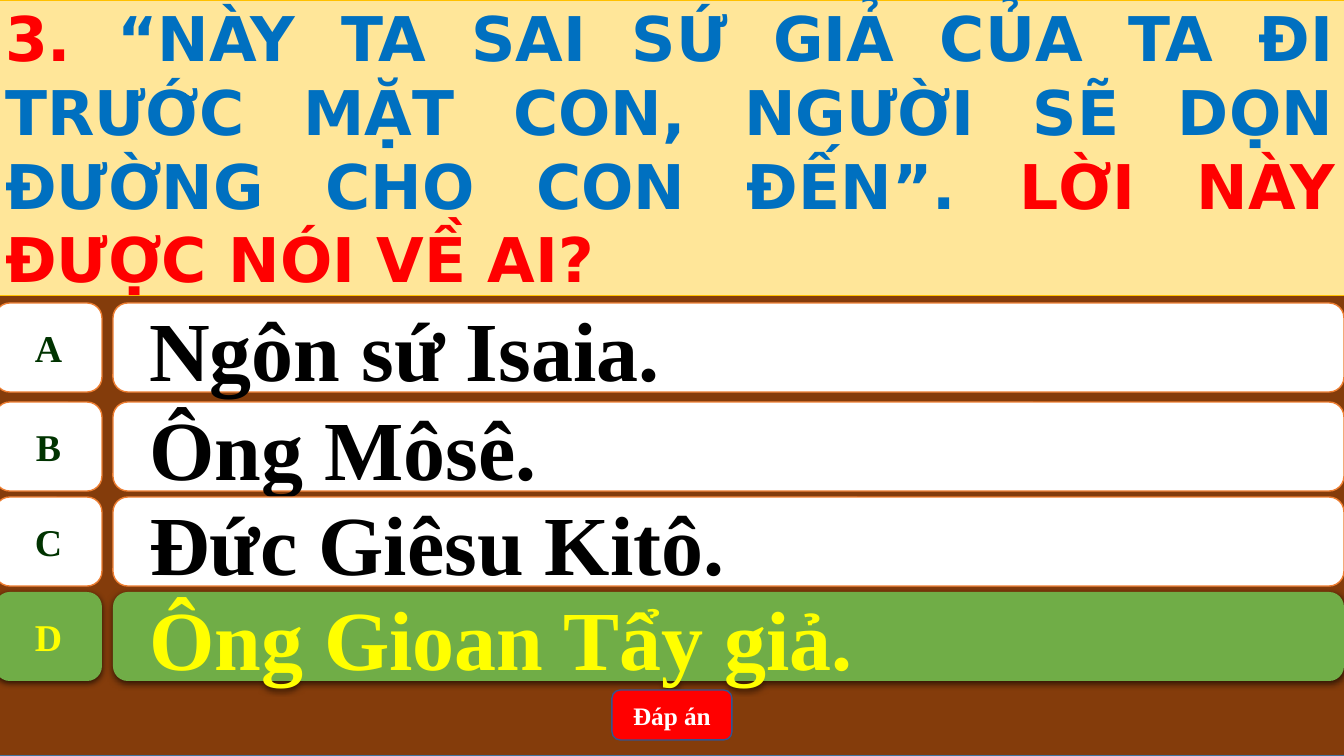
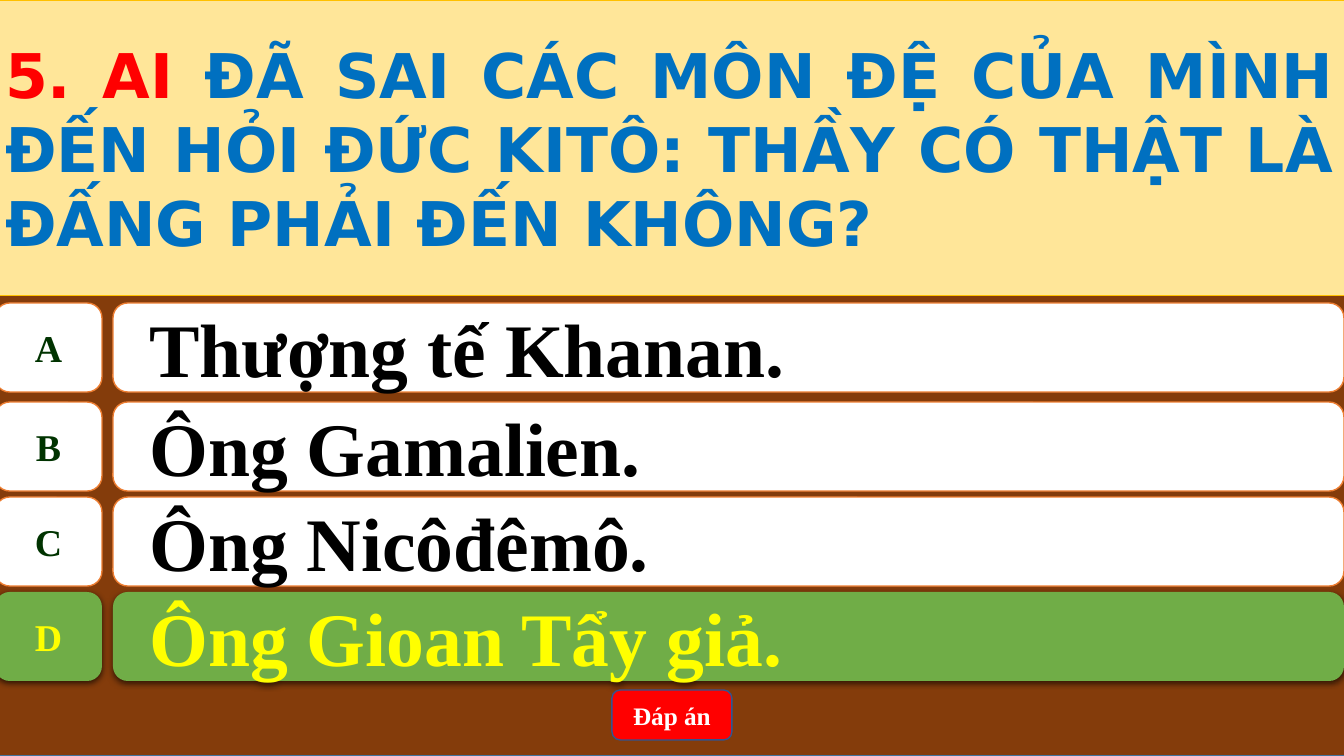
from lxml import etree
from pptx import Presentation
from pptx.dml.color import RGBColor
from pptx.enum.shapes import MSO_SHAPE
from pptx.enum.text import MSO_ANCHOR, MSO_AUTO_SIZE, PP_ALIGN
from pptx.oxml import parse_xml
from pptx.oxml.ns import nsdecls
from pptx.util import Pt

PX = 914400 / 100.8
RECT = MSO_SHAPE.RECTANGLE
ROUNDED = MSO_SHAPE.ROUNDED_RECTANGLE
LETTER_BOX = MSO_SHAPE.FLOWCHART_ALTERNATE_PROCESS
MIDDLE = MSO_ANCHOR.MIDDLE
NO_AUTOFIT = MSO_AUTO_SIZE.NONE
CENTER, LEFT, JUSTIFY = PP_ALIGN.CENTER, PP_ALIGN.LEFT, PP_ALIGN.JUSTIFY

BROWN, CREAM, GOLD = "843C0B", "FFE699", "FFC000"
WHITE, BLACK, ORANGE = "FFFFFF", "000000", "ED7D31"
GREEN, DARK_GREEN, YELLOW = "70AD47", "003300", "FFFF00"
RED, BLUE = "FF0000", "0070C0"
BACKDROP_EDGE, BUTTON_EDGE = "43739E", "325491"
SERIF, SANS = "Times New Roman", "DejaVu Sans"

ROW_TOPS = [303, 402, 497, 592]
ROW_HEIGHT = 89
SOFT_SHADOW = (
    f'<a:effectLst {nsdecls("a")}>'
    '<a:outerShdw blurRad="57150" dist="19050" dir="5400000" algn="ctr" rotWithShape="0">'
    '<a:srgbClr val="000000"><a:alpha val="63000"/></a:srgbClr>'
    '</a:outerShdw></a:effectLst>'
)

QUESTIONS = [
    {
        "title": [
            ("3. ", RED),
            ("“NÀY TA SAI SỨ GIẢ CỦA TA ĐI TRƯỚC MẶT CON, NGƯỜI SẼ DỌN ĐƯỜNG CHO CON ĐẾN”. ", BLUE),
            ("LỜI NÀY ĐƯỢC NÓI VỀ AI?", RED),
        ],
        "answers": ["Ngôn sứ Isaia.", "Ông Môsê.", "Đức Giêsu Kitô.", "Ông Gioan Tẩy giả."],
        "correct": "D",
        "answer_size": 60,
    },
    {
        "title": [
            ("5. AI", RED),
            (" ĐÃ SAI CÁC MÔN ĐỆ CỦA MÌNH ĐẾN HỎI ĐỨC KITÔ: THẦY CÓ THẬT LÀ ĐẤNG PHẢI ĐẾN KHÔNG?", BLUE),
        ],
        "answers": ["Thượng tế Khanan.", "Ông Gamalien.", "Ông Nicôđêmô.", "Ông Gioan Tẩy giả."],
        "correct": "D",
        "answer_size": 54,
    },
]


def rgb(value):
    return RGBColor.from_string(value)


def add_box(slide, kind, box, fill, edge, text="", size=18, color=WHITE, align=CENTER, wrap=True):
    shape = slide.shapes.add_shape(kind, *[round(n * PX) for n in box])
    shape.shadow.inherit = False
    shape.fill.solid()
    shape.fill.fore_color.rgb = rgb(fill)
    if edge:
        shape.line.color.rgb = rgb(edge)
        shape.line.width = Pt(1)
    else:
        shape.line.fill.background()
    if text:
        frame = shape.text_frame
        frame.word_wrap = wrap
        frame.vertical_anchor = MIDDLE
        paragraph = frame.paragraphs[0]
        paragraph.text = text
        paragraph.alignment = align
        paragraph.font.name = SERIF
        paragraph.font.size = Pt(size)
        paragraph.font.bold = True
        paragraph.font.color.rgb = rgb(color)
    return shape


deck = Presentation()
deck.slide_width = round(1344 * PX)
deck.slide_height = round(756 * PX)

for question in QUESTIONS:
    slide = deck.slides.add_slide(deck.slide_layouts[5])
    add_box(slide, RECT, (-5, 0, 1350, 756), BROWN, BACKDROP_EDGE)

    for letter, answer, top in zip("ABCD", question["answers"], ROW_TOPS):
        correct = letter == question["correct"]
        fill, edge = (GREEN, None) if correct else (WHITE, ORANGE)
        letter_box = add_box(
            slide, LETTER_BOX, (-5, top, 107, ROW_HEIGHT), fill, edge,
            letter, 27, YELLOW if correct else DARK_GREEN, wrap=False,
        )
        answer_box = add_box(
            slide, ROUNDED, (113, top, 1231, ROW_HEIGHT), fill, edge,
            answer, question["answer_size"], YELLOW if correct else BLACK, LEFT,
        )
        answer_box.text_frame.margin_left = round(32 * PX)
        if correct:
            for part in (letter_box, answer_box):
                properties = part.element.spPr
                effects = properties.find("{*}effectLst")
                properties.replace(effects, parse_xml(SOFT_SHADOW))

    add_box(slide, ROUNDED, (612, 690, 120, 50), RED, BUTTON_EDGE, "Đáp án")

    title = slide.shapes.title
    title.element.getparent().append(title.element)
    title.left, title.top, title.width, title.height = [round(n * PX) for n in (-5, 0, 1350, 295)]
    title.fill.solid()
    title.fill.fore_color.rgb = rgb(CREAM)
    title.line.color.rgb = rgb(GOLD)
    title.line.width = Pt(0.5)
    title.text_frame.auto_size = NO_AUTOFIT
    title.text_frame.word_wrap = True
    title.text_frame.vertical_anchor = MIDDLE
    sentence = title.text_frame.paragraphs[0]
    sentence.alignment = JUSTIFY
    sentence.line_spacing = 1.0
    sentence.font.name = SANS
    sentence.font.size = Pt(44)
    sentence.font.bold = True
    for words, color in question["title"]:
        run = sentence.add_run()
        run.text = words
        run.font.color.rgb = rgb(color)

deck.save("out.pptx")
